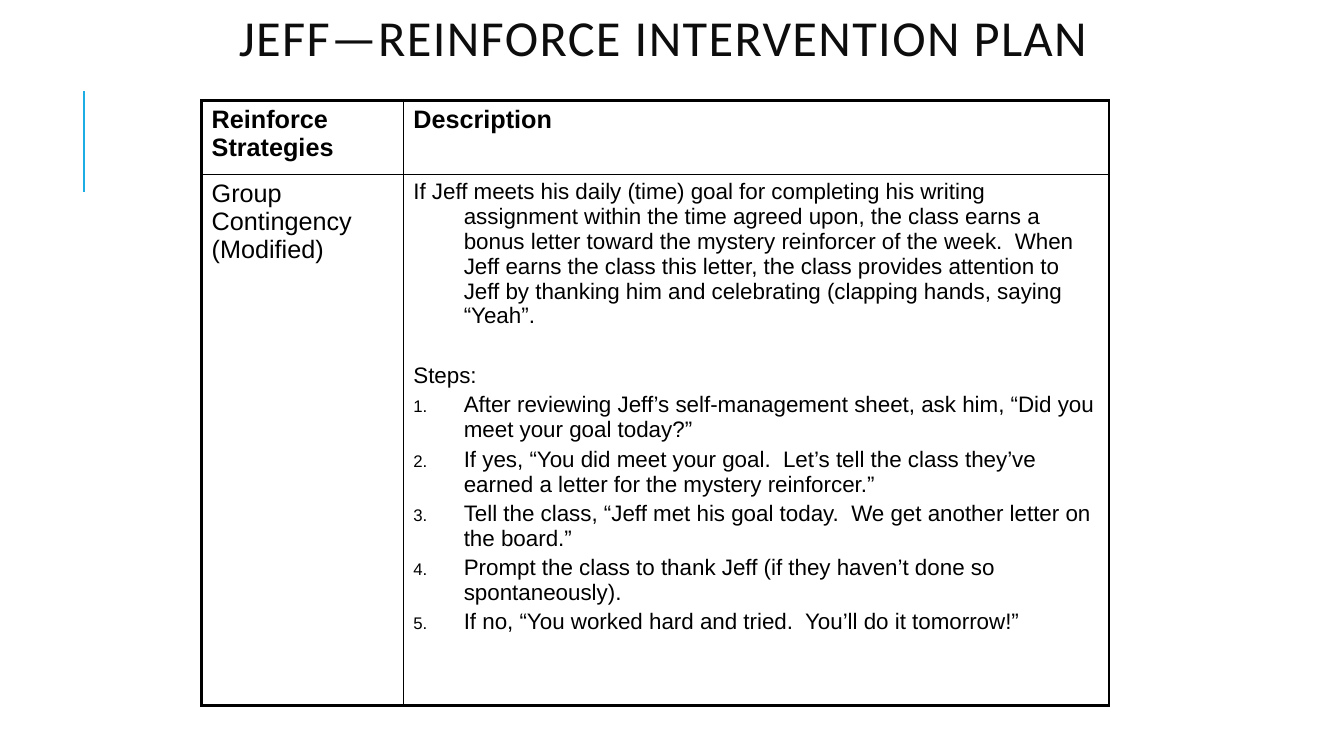
"""Build the reinforcement intervention plan slide for Jeff."""
import pptx
import pptx.util
import pptx.dml.color
import pptx.enum.shapes
import pptx.enum.text
import pptx.oxml
import pptx.oxml.ns
from lxml import etree

Inches = pptx.util.Inches
Pt = pptx.util.Pt
COLOURS = {
    name: pptx.dml.color.RGBColor.from_string(value)
    for name, value in {"title": "0D0D0D", "accent": "1CADE4", "ink": "000000"}.items()
}
HEADING = {"name": "Arial", "size": Pt(18), "bold": True}
STRATEGY = {"name": "Arial", "size": Pt(18), "bold": False}
DETAIL = {"name": "Arial", "size": Pt(16), "bold": False}
SMALL_GAP, STEPS_GAP = 3.2, 24.8

steps = [
    "After reviewing Jeff’s self-management sheet, ask him, “Did you meet your goal today?”",
    "If yes, “You did meet your goal.  Let’s tell the class they’ve earned a letter for the mystery reinforcer.”",
    "Tell the class, “Jeff met his goal today.  We get another letter on the board.”",
    "Prompt the class to thank Jeff (if they haven’t done so spontaneously).",
    "If no, “You worked hard and tried.  You’ll do it tomorrow!”",
]
goal = (
    "If Jeff meets his daily (time) goal for completing his writing assignment within "
    "the time agreed upon, the class earns a bonus letter toward the mystery reinforcer "
    "of the week.  When Jeff earns the class this letter, the class provides attention "
    "to Jeff by thanking him and celebrating (clapping hands, saying “Yeah”."
)


def add_xml(parent, tag, **attributes):
    child = etree.SubElement(parent, pptx.oxml.ns.qn(tag))
    for key, value in attributes.items():
        child.set(key, str(value))
    return child


def format_text(paragraph, style, colour):
    for key, value in style.items():
        setattr(paragraph.font, key, value)
    paragraph.font.color.rgb = COLOURS[colour]


presentation = pptx.Presentation()
presentation.slide_width = Inches(13.33)
presentation.slide_height = Inches(7.5)
slide = presentation.slides.add_slide(presentation.slide_layouts[5])

accent = slide.shapes.add_connector(
    pptx.enum.shapes.MSO_CONNECTOR.STRAIGHT,
    Inches(0.83), Inches(1.9), Inches(0.83), Inches(0.9),
)
accent.line.color.rgb = COLOURS["accent"]
accent.line.width = Pt(1.5)
add_xml(accent._element.spPr, "a:effectLst")

title = slide.shapes.title
title.left, title.top = Inches(2.08), Inches(0)
title.width, title.height = Inches(9), Inches(0.83)
title.text_frame.text = "JEFF—REINFORCE INTERVENTION PLAN"
title.text_frame.auto_size = pptx.enum.text.MSO_AUTO_SIZE.NONE
title.text_frame.vertical_anchor = pptx.enum.text.MSO_ANCHOR.MIDDLE
heading = title.text_frame.paragraphs[0]
heading.alignment = pptx.enum.text.PP_ALIGN.CENTER
heading.line_spacing = 0.8
format_text(heading.runs[0], {"name": "Calibri", "size": Pt(36)}, "title")
heading.runs[0].font._element.set("spc", "100")

plan = slide.shapes.add_table(2, 2, Inches(2), Inches(1), Inches(9), Inches(6)).table
plan.first_row = plan.horz_banding = False
for column, width in zip(plan.columns, (2, 7)):
    column.width = Inches(width)
for row, height in zip(plan.rows, (0.73, 5.27)):
    row.height = Inches(height)

contents = [
    [(["Reinforce Strategies"], HEADING), (["Description"], HEADING)],
    [(["Group Contingency (Modified)"], STRATEGY), ([goal, "Steps:", *steps], DETAIL)],
]
for row_index, row_contents in enumerate(contents):
    for column_index, (texts, style) in enumerate(row_contents):
        cell = plan.cell(row_index, column_index)
        borders = {
            "L": column_index == 0, "R": column_index == 1,
            "T": row_index == 0, "B": row_index == 1,
        }
        properties = cell._tc.get_or_add_tcPr()
        for side, is_outer in borders.items():
            border = add_xml(properties, f"a:ln{side}", w=Pt(2.25 if is_outer else 1))
            fill = add_xml(border, "a:solidFill")
            add_xml(fill, "a:srgbClr", val=COLOURS["ink"])
        cell.fill.background()
        cell.text = "\n".join(texts)
        for text, paragraph in zip(texts, cell.text_frame.paragraphs):
            if style is DETAIL:
                indent = paragraph._p.get_or_add_pPr()
                indent.set("marL", str(Inches(0.5)))
                indent.set("indent", str(Inches(-0.5)))
                if text != goal:
                    paragraph.space_before = Pt(SMALL_GAP if text in steps else STEPS_GAP)
                if text in steps:
                    bullet_colour = add_xml(indent, "a:buClr")
                    add_xml(bullet_colour, "a:srgbClr", val=COLOURS["ink"])
                    add_xml(indent, "a:buSzPct", val=75000)
                    add_xml(indent, "a:buFont", typeface="Arial")
                    add_xml(indent, "a:buAutoNum", type="arabicPeriod")
            format_text(paragraph.runs[0], style, "ink")

presentation.save("out.pptx")
